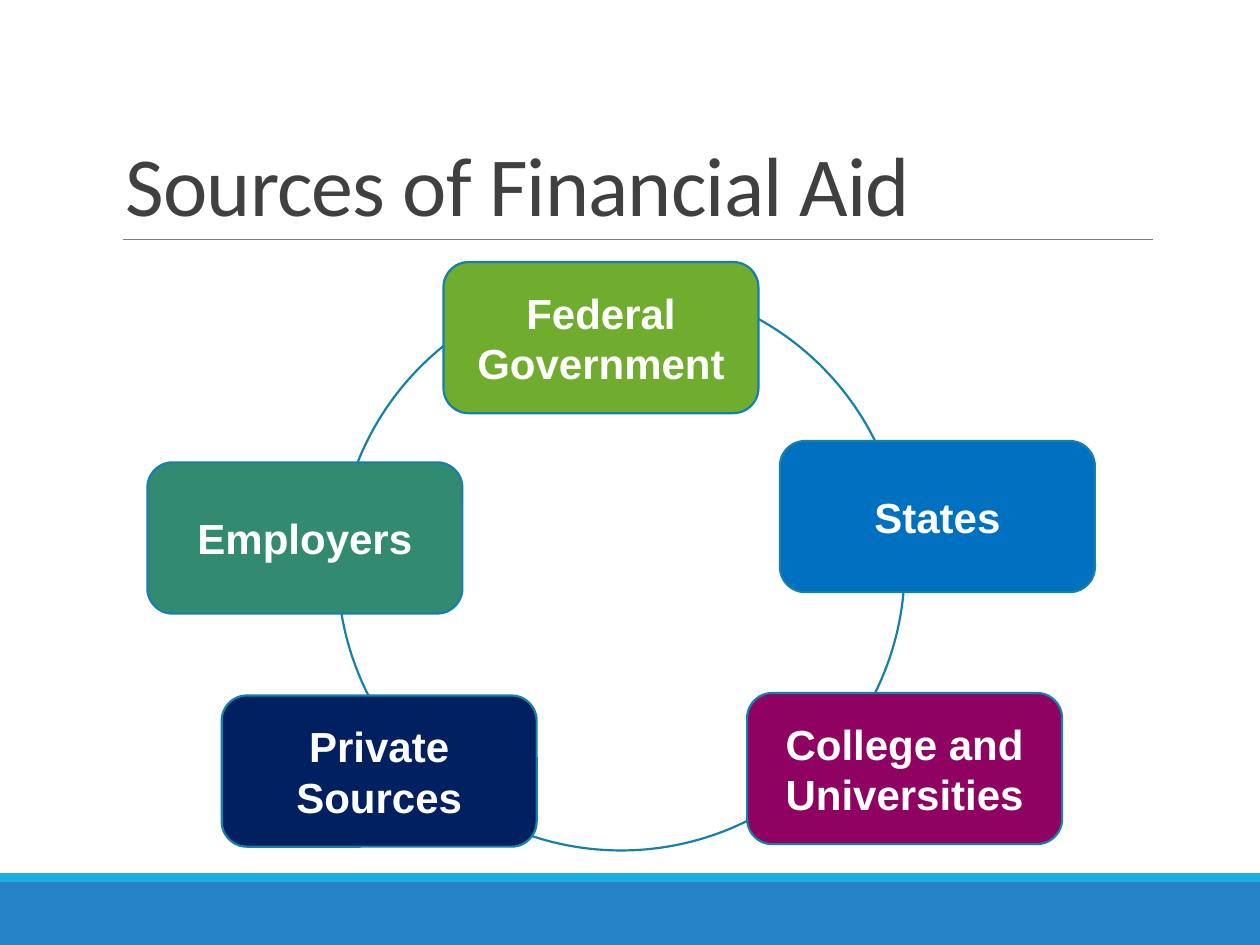
import pptx
import pptx.dml.color
import pptx.enum.shapes
import pptx.enum.text
import pptx.oxml
import pptx.oxml.ns
import pptx.util

Inches = pptx.util.Inches
Pt = pptx.util.Pt
RGBColor = pptx.dml.color.RGBColor
ShapeKind = pptx.enum.shapes.MSO_SHAPE
Align = pptx.enum.text.PP_ALIGN
Anchor = pptx.enum.text.MSO_ANCHOR

WHITE = RGBColor(0xFF, 0xFF, 0xFF)
TITLE_GRAY = RGBColor(0x40, 0x40, 0x40)
RULE_GRAY = RGBColor(0x80, 0x80, 0x80)
FOOTER_BLUE = RGBColor(0x26, 0x83, 0xC6)
FOOTER_CYAN = RGBColor(0x1C, 0xAD, 0xE4)
RING_BLUE = RGBColor(0x15, 0x80, 0xA9)
GREEN = RGBColor(0x70, 0xAC, 0x2E)
BLUE = RGBColor(0x00, 0x70, 0xC0)
PLUM = RGBColor(0x90, 0x02, 0x61)
NAVY = RGBColor(0x00, 0x20, 0x60)
TEAL = RGBColor(0x32, 0x8B, 0x71)

NODE_WIDTH, NODE_HEIGHT = 2.5, 1.2
# Text, fill, and left and top offset from the ring's box
SOURCES = [
    ("Federal Government", GREEN, 0.84, -0.17),
    ("States", BLUE, 3.51, 1.25),
    ("College and Universities", PLUM, 3.25, 3.25),
    ("Private Sources", NAVY, -0.92, 3.27),
    ("Employers", TEAL, -1.51, 1.42),
]


def write_text(shape, text, *, font, size, color, bold=False, align=Align.LEFT,
               anchor=Anchor.MIDDLE, line_spacing=None, tracking=None):
    """Put one formatted paragraph in a shape; tracking is in points."""
    frame = shape.text_frame
    frame.word_wrap = True
    frame.vertical_anchor = anchor
    para = frame.paragraphs[0]
    para.alignment = align
    if line_spacing is not None:
        para.line_spacing = line_spacing
    span = para.add_run()
    span.text = text
    span.font.name = font
    span.font.size = Pt(size)
    span.font.bold = bold
    span.font.color.rgb = color
    if tracking is not None:
        span._r.get_or_add_rPr().set("spc", str(round(tracking * 100)))


def add_box(page, kind, left, top, width, height, fill=None, line=None):
    box = page.shapes.add_shape(
        kind, Inches(left), Inches(top), Inches(width), Inches(height))
    box.shadow.inherit = False
    if fill is None:
        box.fill.background()
    else:
        box.fill.solid()
        box.fill.fore_color.rgb = fill
    if line is None:
        box.line.fill.background()
    else:
        box.line.color.rgb = line
        box.line.width = Pt(1.25)
    return box


def add_footer(page, left, top, width, height):
    """Draw the footer band with a thin bright strip along its top."""
    strip = 0.07
    add_box(page, ShapeKind.RECTANGLE, left, top + strip, width, height - strip,
            fill=FOOTER_BLUE)
    add_box(page, ShapeKind.RECTANGLE, left, top, width, strip, fill=FOOTER_CYAN)


def add_title(page, left, top, width, height):
    """Write the title above a thin rule at the bottom of its box."""
    bottom = Inches(top + height)
    rule = page.shapes.add_connector(
        pptx.enum.shapes.MSO_CONNECTOR.STRAIGHT,
        Inches(left + 0.08), bottom, Inches(left + width), bottom)
    rule.line.color.rgb = RULE_GRAY
    rule.line.width = Pt(0.5)
    rule._element.spPr.append(
        pptx.oxml.parse_xml("<a:effectLst %s/>" % pptx.oxml.ns.nsdecls("a")))
    title = page.shapes.add_textbox(
        Inches(left), Inches(top), Inches(width), Inches(height))
    write_text(title, "Sources of Financial Aid", font="Calibri", size=48,
               color=TITLE_GRAY, anchor=Anchor.BOTTOM, line_spacing=0.85,
               tracking=-0.5)


def add_source_ring(page, left, top, diameter):
    add_box(page, ShapeKind.OVAL, left, top, diameter, diameter, line=RING_BLUE)
    for text, fill, across, down in SOURCES:
        node = add_box(page, ShapeKind.ROUNDED_RECTANGLE, left + across, top + down,
                       NODE_WIDTH, NODE_HEIGHT, fill=fill, line=RING_BLUE)
        write_text(node, text, font="Arial", size=24, color=WHITE, bold=True,
                   align=Align.CENTER)


def main():
    deck = pptx.Presentation()
    deck.slide_width = Inches(10)
    deck.slide_height = Inches(7.5)
    page = deck.slides.add_slide(deck.slide_layouts[6])
    add_footer(page, 0, 6.93, 10, 0.57)
    add_title(page, 0.9, 0.31, 8.25, 1.59)
    add_source_ring(page, 2.68, 2.25, 4.5)
    deck.save("out.pptx")


if __name__ == "__main__":
    main()
